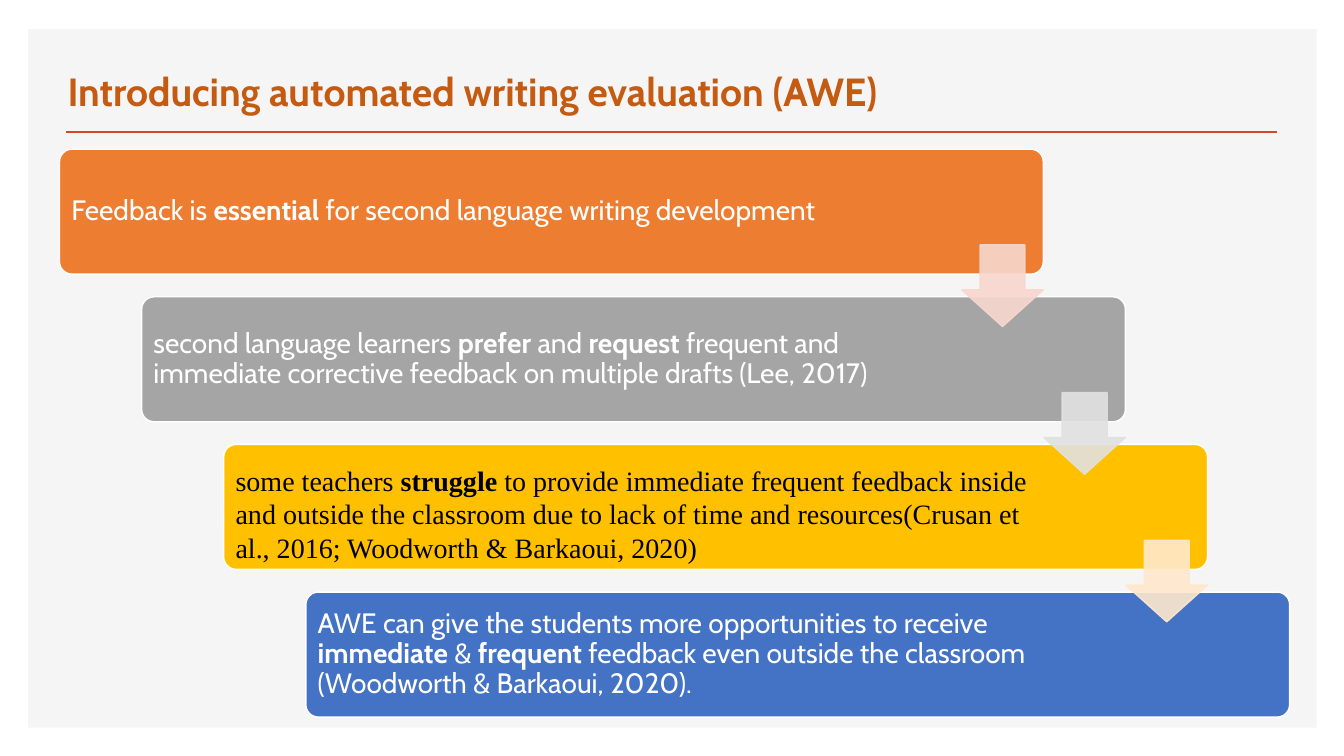
from dataclasses import dataclass

from lxml import etree
from pptx import Presentation
from pptx.dml.color import RGBColor
from pptx.enum.shapes import MSO_CONNECTOR, MSO_SHAPE
from pptx.enum.text import MSO_ANCHOR
from pptx.oxml.ns import qn
from pptx.util import Emu, Inches, Pt

RECT = MSO_SHAPE.RECTANGLE
ROUND = MSO_SHAPE.ROUNDED_RECTANGLE
ARROW = MSO_SHAPE.DOWN_ARROW
STRAIGHT = MSO_CONNECTOR.STRAIGHT
MIDDLE = MSO_ANCHOR.MIDDLE
BOTTOM = MSO_ANCHOR.BOTTOM

WHITE = RGBColor(0xFF, 0xFF, 0xFF)
BLACK = RGBColor(0x00, 0x00, 0x00)
PANEL = RGBColor(0xF5, 0xF5, 0xF5)
RUST = RGBColor(0xC5, 0x5A, 0x11)
RED = RGBColor(0xD2, 0x47, 0x26)
ORANGE = RGBColor(0xED, 0x7D, 0x31)
GRAY = RGBColor(0xA5, 0xA5, 0xA5)
GOLD = RGBColor(0xFF, 0xC0, 0x00)
BLUE = RGBColor(0x44, 0x72, 0xC4)
PINK = RGBColor(0xF8, 0xD7, 0xCE)
SILVER = RGBColor(0xE1, 0xE1, 0xE1)
CREAM = RGBColor(0xFF, 0xE8, 0xCC)

CABIN = "Cabin"
TIMES = "Times New Roman"
WIDTH, HEIGHT = Inches(13.33), Inches(7.5)


@dataclass(frozen=True)
class Box:
    """A frame in percent of the slide's width and height."""
    x: float
    y: float
    w: float
    h: float

    def frame(self) -> tuple[Emu, Emu, Emu, Emu]:
        return (across(self.x), down(self.y), across(self.w), down(self.h))


@dataclass(frozen=True)
class Run:
    text: str
    bold: bool = False


@dataclass(frozen=True)
class Style:
    font: str
    size: float
    color: RGBColor
    space: float = 0.9


@dataclass(frozen=True)
class Pad:
    """Text margins in percent of the slide's width and height."""
    side: float
    top: float
    base: float


PLAIN = Style(CABIN, 20, WHITE)
SERIF = Style(TIMES, 20, BLACK, 1.0)
EVEN = Pad(0.6, 1.07, 1.07)
LOW = Pad(0.6, 1.73, 0)


@dataclass(frozen=True)
class Step:
    fill: RGBColor
    runs: tuple[Run, ...]
    arrow: RGBColor | None = None
    style: Style = PLAIN
    pad: Pad = EVEN


STEPS = (
    Step(ORANGE, (
        Run("Feedback is "), Run("essential", True),
        Run(" for second language writing development")), PINK),
    Step(GRAY, (
        Run("second language learners "), Run("prefer", True),
        Run(" and "), Run("request", True),
        Run(" frequent and immediate corrective feedback on multiple "
            "drafts (Lee, 2017)")), SILVER),
    Step(GOLD, (
        Run("some teachers "), Run("struggle", True),
        Run(" to provide immediate frequent feedback inside and outside the "
            "classroom due to lack of time and resources(Crusan et al., 2016; "
            "Woodworth & Barkaoui, 2020)")), CREAM, SERIF, LOW),
    Step(BLUE, (
        Run("AWE can give the students more opportunities to receive "),
        Run("immediate ", True), Run("& "), Run("frequent", True),
        Run(" feedback even outside the classroom "
            "(Woodworth & Barkaoui, 2020)."))),
)

CARD = Box(4.43, 19.73, 73.2, 16.53)
SHIFT, DROP = 6.11, 19.53
HEAD = Box(4.28, 6.53, 91.67, 9.33)


def across(share: float) -> Emu:
    return Emu(round(WIDTH * share / 100))


def down(share: float) -> Emu:
    return Emu(round(HEIGHT * share / 100))


def add_form(slide, kind: MSO_SHAPE, box: Box, fill: RGBColor,
             edge: RGBColor | None = None, bends: tuple[float, ...] = ()):
    form = slide.shapes.add_shape(kind, *box.frame())
    form.shadow.inherit = False
    for index, bend in enumerate(bends):
        form.adjustments[index] = bend
    form.fill.solid()
    form.fill.fore_color.rgb = fill
    if edge is None:
        form.line.fill.background()
    else:
        form.line.color.rgb = edge
        form.line.width = Pt(1)
    return form


def add_text(slide, box: Box, runs: tuple[Run, ...], style: Style,
             pad: Pad, anchor: MSO_ANCHOR) -> None:
    frame = slide.shapes.add_textbox(*box.frame()).text_frame
    frame.word_wrap = True
    frame.vertical_anchor = anchor
    frame.margin_left = frame.margin_right = across(pad.side)
    frame.margin_top, frame.margin_bottom = down(pad.top), down(pad.base)
    para = frame.paragraphs[0]
    para.line_spacing = style.space
    for part in runs:
        run = para.add_run()
        run.text = part.text
        run.font.name = style.font
        run.font.size = Pt(style.size)
        run.font.bold = part.bold
        run.font.color.rgb = style.color


def add_rule(slide, left: float, right: float, top: float) -> None:
    rule = slide.shapes.add_connector(
        STRAIGHT, across(left), down(top), across(right), down(top))
    rule.line.color.rgb = RED
    rule.line.width = Pt(2)
    etree.SubElement(rule.element.spPr, qn("a:effectLst"))


def add_arrow(slide, card: Box, color: RGBColor) -> None:
    """Hang a sheer arrow from the card's lower right corner."""
    wide = 6.08
    box = Box(card.x + card.w - wide, card.y + 12.67, wide, 10.8)
    arrow = add_form(slide, ARROW, box, color, color, (0.55, 0.45))
    for tint in arrow.element.spPr.iter(qn("a:srgbClr")):
        etree.SubElement(tint, qn("a:alpha"), val="90000")


def main() -> None:
    deck = Presentation()
    deck.slide_width, deck.slide_height = WIDTH, HEIGHT
    slide = deck.slides.add_slide(deck.slide_layouts[6])

    add_form(slide, RECT, Box(2.1, 3.87, 95.87, 92.4), PANEL)
    add_rule(slide, 4.95, 95.05, 17.47)
    add_text(slide, HEAD,
             (Run("Introducing automated writing evaluation (AWE)", True),),
             Style(CABIN, 28, RUST), Pad(0.75, 0.67, 0.67), BOTTOM)

    cards = [Box(CARD.x + i * SHIFT, CARD.y + i * DROP, CARD.w, CARD.h)
             for i in range(len(STEPS))]
    for step, card in zip(STEPS, cards):
        add_form(slide, ROUND, card, step.fill, WHITE, (0.1,))
        inner = Box(card.x + 0.28, card.y + 0.47, 60.5, 15.6)
        add_text(slide, inner, step.runs, step.style, step.pad, MIDDLE)
    for step, card in zip(STEPS, cards):
        if step.arrow is not None:
            add_arrow(slide, card, step.arrow)

    deck.save("out.pptx")


if __name__ == "__main__":
    main()
